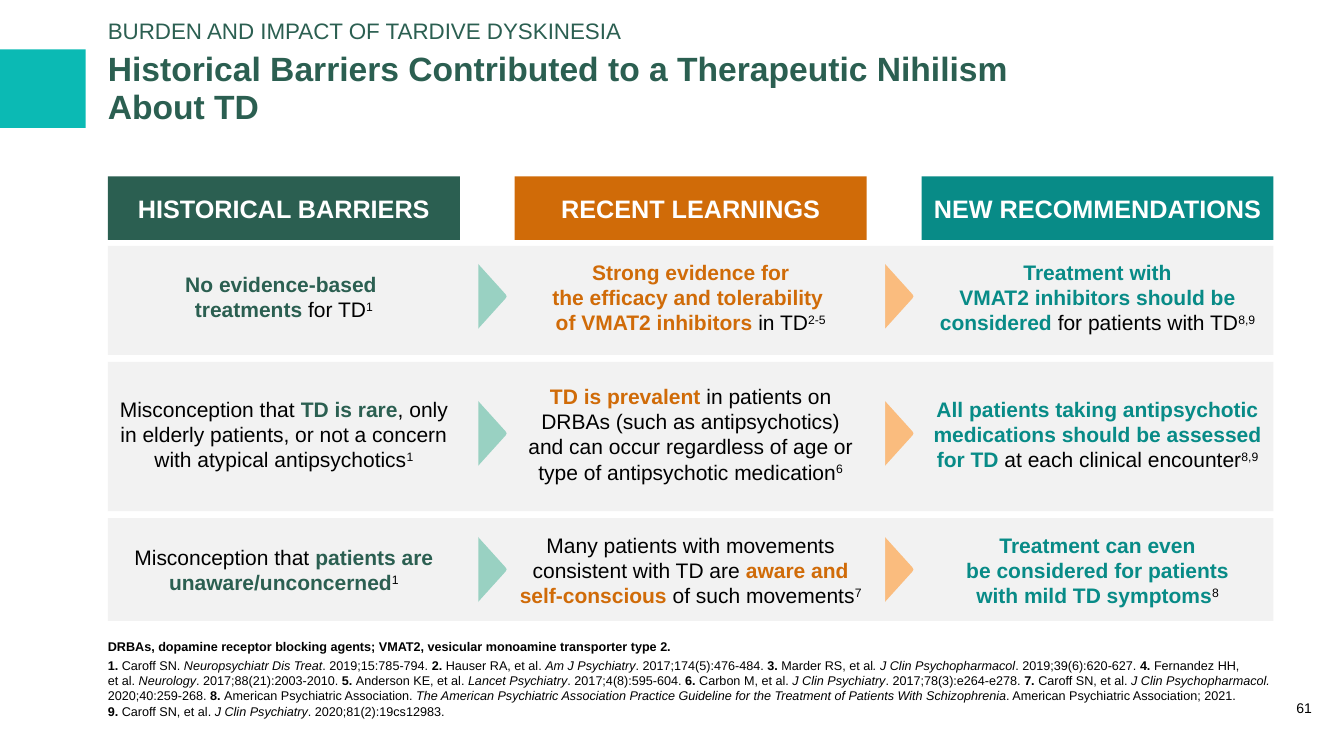
import pptx
import pptx.dml.color
import pptx.enum.shapes
import pptx.enum.text
import pptx.util

Inches = pptx.util.Inches
Pt = pptx.util.Pt
RGBColor = pptx.dml.color.RGBColor
ALIGN = pptx.enum.text.PP_ALIGN
ANCHOR = pptx.enum.text.MSO_ANCHOR

BLACK = RGBColor(0x00, 0x00, 0x00)
WHITE = RGBColor(0xFF, 0xFF, 0xFF)
GREEN = RGBColor(0x2B, 0x5F, 0x51)
ORANGE = RGBColor(0xD0, 0x6B, 0x08)
TEAL = RGBColor(0x08, 0x8B, 0x87)
TURQUOISE = RGBColor(0x0B, 0xBA, 0xB4)
GRAY = RGBColor(0xF2, 0xF2, 0xF2)
MINT = RGBColor(0x99, 0xD1, 0xC2)
PEACH = RGBColor(0xFA, 0xBC, 0x7E)

LEFT, WIDTH = 1.07, 11.56
COLUMN_WIDTH = 3.49
COLUMN_STEP = (WIDTH - COLUMN_WIDTH) / 2
CELL_HEIGHT = 0.97

COLUMNS = [
    ("HISTORICAL BARRIERS", GREEN),
    ("RECENT LEARNINGS", ORANGE),
    ("NEW RECOMMENDATIONS", TEAL),
]
ARROW_COLORS = [MINT, PEACH]
# Outline of a right-pointing arrowhead, from the middle of its left edge
ARROW_OUTLINE = [
    (0, -0.31), (0.01, -0.33), (0.02, -0.34), (0.04, -0.34), (0.05, -0.33),
    (0.33, -0.02), (0.34, 0), (0.33, 0.02),
    (0.05, 0.33), (0.04, 0.34), (0.02, 0.34), (0.01, 0.33), (0, 0.31),
]

# Band top, band height, cell top, cell texts: *accent*, ^superscript^
ROWS = [
    (2.44, 1.08, 2.46, [
        "*No evidence-based \ntreatments *for TD^1^",
        "*Strong evidence for\nthe efficacy and tolerability \n"
        "of VMAT2 inhibitors *in TD^2-5^",
        "*Treatment with\nVMAT2 inhibitors should be considered *"
        "for patients with TD^8,9^",
    ]),
    (3.59, 1.48, 3.82, [
        "Misconception that *TD is rare*, only in elderly patients, "
        "or not a concern with atypical antipsychotics^1^",
        "*TD is prevalent *in patients on\nDRBAs (such as antipsychotics) "
        "and can occur regardless of age or type of antipsychotic medication^6^",
        "*All patients taking antipsychotic medications should be assessed "
        "for TD *at each clinical encounter^8,9^",
    ]),
    (5.14, 1.02, 5.17, [
        "Misconception that *patients are unaware/unconcerned*^1^",
        "Many patients with movements consistent with TD are "
        "*aware and self-conscious *of such movements^7^",
        "*Treatment can even\nbe considered for patients\n"
        "with mild TD symptoms*^8^",
    ]),
]
# Extra room on each side (horizontal, vertical) by row and column
CELL_GROWTH = {(1, 1): (0, 0.07), (2, 1): (0.06, 0)}

ABBREVIATIONS = (
    "*DRBAs, dopamine receptor blocking agents; "
    "VMAT2, vesicular monoamine transporter type 2.*"
)
REFERENCES = (
    "*1. *Caroff SN. _Neuropsychiatr Dis Treat_. 2019;15:785-794. "
    "*2. *Hauser RA, et al. _Am J Psychiatry_. 2017;174(5):476-484. "
    "*3. *Marder RS, et al_. J Clin Psychopharmacol_. 2019;39(6):620-627. "
    "*4. *Fernandez HH, \net al. _Neurology_. 2017;88(21):2003-2010. "
    "*5. *Anderson KE, et al. _Lancet Psychiatry_. 2017;4(8):595-604. "
    "*6. *Carbon M, et al. _J Clin Psychiatry_. 2017;78(3):e264-e278. "
    "*7. *Caroff SN, et al. _J Clin Psychopharmacol. _2020;40:259-268. "
    "*8. *American Psychiatric Association. _The American Psychiatric "
    "Association Practice Guideline for the Treatment of Patients With "
    "Schizophrenia_. American Psychiatric Association; 2021. \n"
    "*9. *Caroff SN, et al. _J Clin Psychiatry_. 2020;81(2):19cs12983."
)


class SlideBuilder:
    font_name = "Arial"

    def __init__(self, slide):
        self.slide = slide

    def paint(self, shape, color):
        shape.shadow.inherit = False
        shape.fill.solid()
        shape.fill.fore_color.rgb = color
        shape.line.fill.background()

    def rectangle(self, left, top, width, height, color):
        shape = self.slide.shapes.add_shape(
            pptx.enum.shapes.MSO_SHAPE.RECTANGLE,
            Inches(left), Inches(top), Inches(width), Inches(height))
        self.paint(shape, color)
        return shape

    def arrow(self, left, middle, color):
        """Draw a rounded arrowhead whose left edge is cut straight by its band."""
        points = [(Inches(left + x), Inches(middle + y)) for x, y in ARROW_OUTLINE]
        builder = self.slide.shapes.build_freeform(*points[0], scale=1.0)
        builder.add_line_segments(points[1:], close=True)
        self.paint(builder.convert_to_shape(), color)
        self.rectangle(left - 0.04, middle - 0.35, 0.1, 0.72, GRAY)

    def text_box(self, left, top, width, height, texts, size, **style):
        shape = self.slide.shapes.add_textbox(
            Inches(left), Inches(top), Inches(width), Inches(height))
        self.fill_text(shape, texts, size, **style)

    def fill_text(self, shape, texts, size, color=BLACK, accent=None, margins=(0, 0),
                  anchor=ANCHOR.MIDDLE, align=ALIGN.LEFT, spacing=None, after=0):
        frame = shape.text_frame
        frame.word_wrap = True
        frame.vertical_anchor = anchor
        frame.margin_left = frame.margin_right = Inches(margins[0])
        frame.margin_top = frame.margin_bottom = Inches(margins[1])
        for index, text in enumerate(texts):
            paragraph = frame.add_paragraph() if index else frame.paragraphs[0]
            paragraph.alignment = align
            paragraph.line_spacing = spacing
            paragraph.space_after = Pt(after if index < len(texts) - 1 else 0)
            paragraph.font.name = self.font_name
            paragraph.font.size = Pt(size)
            self.add_runs(paragraph, text, color, accent or color)

    def add_runs(self, paragraph, text, color, accent):
        """Split text at * (bold accent), _ (italic), ^ (superscript) and line breaks."""
        active = set()
        piece = ""
        for character in text + "*":
            if character not in "*_^\n":
                piece += character
                continue
            if piece:
                run = paragraph.add_run()
                run.text = piece
                run.font.bold = "*" in active
                run.font.italic = "_" in active
                run.font.color.rgb = accent if "*" in active else color
                if "^" in active:
                    run.font._element.set("baseline", "30000")
                piece = ""
            if character == "\n":
                paragraph.add_line_break()
            else:
                active ^= {character}


def main():
    presentation = pptx.Presentation()
    presentation.slide_width = Inches(13.33)
    presentation.slide_height = Inches(7.5)
    builder = SlideBuilder(presentation.slides.add_slide(presentation.slide_layouts[6]))

    builder.rectangle(0, 0.49, 0.85, 0.78, TURQUOISE)
    builder.text_box(
        LEFT, 0.39, 9.86, 0.99,
        ["*Historical Barriers Contributed to a Therapeutic Nihilism About TD*"],
        24, color=GREEN, spacing=0.95)
    builder.text_box(12.77, 6.68, 0.33, 0.43, ["61"], 10,
                     anchor=ANCHOR.BOTTOM, align=ALIGN.CENTER, spacing=0.95)
    builder.text_box(LEFT, 0.18, 10.26, 0.28,
                     ["BURDEN AND IMPACT OF TARDIVE DYSKINESIA"],
                     16, color=GREEN, spacing=0.95)

    for band_top, band_height, _, _ in ROWS:
        builder.rectangle(LEFT, band_top, WIDTH, band_height, GRAY)

    for column, (heading, color) in enumerate(COLUMNS):
        left = LEFT + column * COLUMN_STEP
        header = builder.rectangle(left, 1.75, COLUMN_WIDTH, 0.63, color)
        builder.fill_text(header, [f"*{heading}*"], 18, color=WHITE,
                          margins=(0.1, 0.1), align=ALIGN.CENTER)
        for row, (_, _, top, texts) in enumerate(ROWS):
            grow_x, grow_y = CELL_GROWTH.get((row, column), (0, 0))
            builder.text_box(
                left - grow_x, top - grow_y,
                COLUMN_WIDTH + 2 * grow_x, CELL_HEIGHT + 2 * grow_y,
                [texts[column]], 15, accent=color,
                margins=(0.1, 0.05), align=ALIGN.CENTER)

    for _, _, top, _ in ROWS:
        for gap, color in enumerate(ARROW_COLORS):
            left = LEFT + (gap + 1) * COLUMN_STEP - 0.42
            builder.arrow(left, top + 0.48, color)

    builder.text_box(LEFT, 6.31, WIDTH, 0.82, [ABBREVIATIONS, REFERENCES], 9,
                     anchor=ANCHOR.BOTTOM, after=3)
    presentation.save("out.pptx")


if __name__ == "__main__":
    main()
